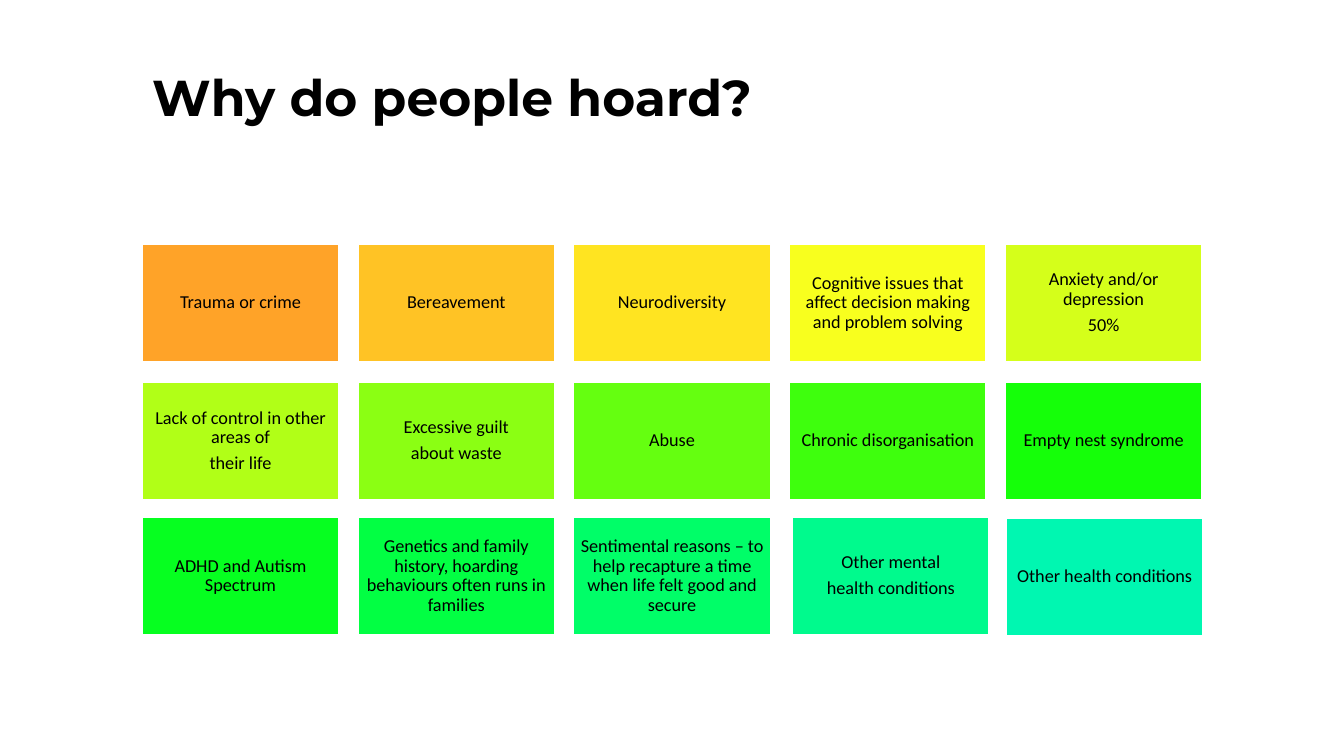
import pptx
import pptx.util
import pptx.dml.color
import pptx.enum.shapes
import pptx.enum.text

Inches = pptx.util.Inches
Pt = pptx.util.Pt
RGBColor = pptx.dml.color.RGBColor
ALIGN = pptx.enum.text.PP_ALIGN
ANCHOR = pptx.enum.text.MSO_ANCHOR

BLACK = RGBColor(0x00, 0x00, 0x00)
WHITE = RGBColor(0xFF, 0xFF, 0xFF)

# Reasons in reading order, each with its tile colour
REASONS = [
    ("Trauma or crime", RGBColor(0xFF, 0xA3, 0x28)),
    ("Bereavement", RGBColor(0xFF, 0xC3, 0x25)),
    ("Neurodiversity", RGBColor(0xFF, 0xE4, 0x21)),
    ("Cognitive issues that affect decision making and problem solving",
     RGBColor(0xF8, 0xFF, 0x1E)),
    ("Anxiety and/or depression\n50%", RGBColor(0xD5, 0xFF, 0x1A)),
    ("Lack of control in other areas of\ntheir life", RGBColor(0xB1, 0xFF, 0x17)),
    ("Excessive guilt\nabout waste", RGBColor(0x8B, 0xFF, 0x13)),
    ("Abuse", RGBColor(0x65, 0xFF, 0x10)),
    ("Chronic disorganisation", RGBColor(0x3E, 0xFF, 0x0D)),
    ("Empty nest syndrome", RGBColor(0x15, 0xFF, 0x09)),
    ("ADHD and Autism Spectrum", RGBColor(0x06, 0xFF, 0x20)),
    ("Genetics and family history, hoarding behaviours often runs in families",
     RGBColor(0x02, 0xFF, 0x43)),
    ("Sentimental reasons – to help recapture a time when life felt good and secure",
     RGBColor(0x00, 0xFE, 0x68)),
    ("Other mental\nhealth conditions", RGBColor(0x00, 0xFA, 0x8D)),
    ("Other health conditions", RGBColor(0x00, 0xF7, 0xB1)),
]
COLS = 5
LEFT, STEP = 1.41, 2.14
TOPS = [2.42, 3.79, 5.13]
WIDTH, HEIGHT = 1.95, 1.17
NUDGE = {13: (0.03, 0), 14: (0.01, 0.01)}  # tiles set slightly off the grid

deck = pptx.Presentation()
deck.slide_width = Inches(13.33)
deck.slide_height = Inches(7.5)
slide = deck.slides.add_slide(deck.slide_layouts[5])

# Title
title = slide.shapes.title
title.left, title.top = Inches(LEFT), Inches(0.67)
title.width, title.height = Inches(11.15), Inches(1.2)
frame = title.text_frame
frame.text = "Why do people hoard?"
frame.vertical_anchor = ANCHOR.TOP
line = frame.paragraphs[0]
line.alignment = ALIGN.LEFT
line.line_spacing = 0.9
line.font.name = "Montserrat"
line.font.size = Pt(36)
line.font.bold = True
line.font.color.rgb = BLACK

# Grid of reasons
for index, (text, color) in enumerate(REASONS):
    row, col = divmod(index, COLS)
    right, down = NUDGE.get(index, (0, 0))
    tile = slide.shapes.add_shape(
        pptx.enum.shapes.MSO_SHAPE.RECTANGLE,
        Inches(LEFT + col * STEP + right), Inches(TOPS[row] + down),
        Inches(WIDTH), Inches(HEIGHT))
    tile.shadow.inherit = False
    tile.fill.solid()
    tile.fill.fore_color.rgb = color
    tile.line.color.rgb = WHITE
    tile.line.width = Pt(1)

    frame = tile.text_frame
    frame.text = text
    frame.word_wrap = True
    frame.vertical_anchor = ANCHOR.MIDDLE
    frame.margin_left = frame.margin_right = Inches(0.05)
    frame.margin_top = frame.margin_bottom = Inches(0.05)
    for line in frame.paragraphs:
        line.alignment = ALIGN.CENTER
        line.line_spacing = 0.9
        line.space_after = Pt(4.55)
        line.font.name = "Calibri"
        line.font.size = Pt(13)
        line.font.color.rgb = BLACK

deck.save("out.pptx")
